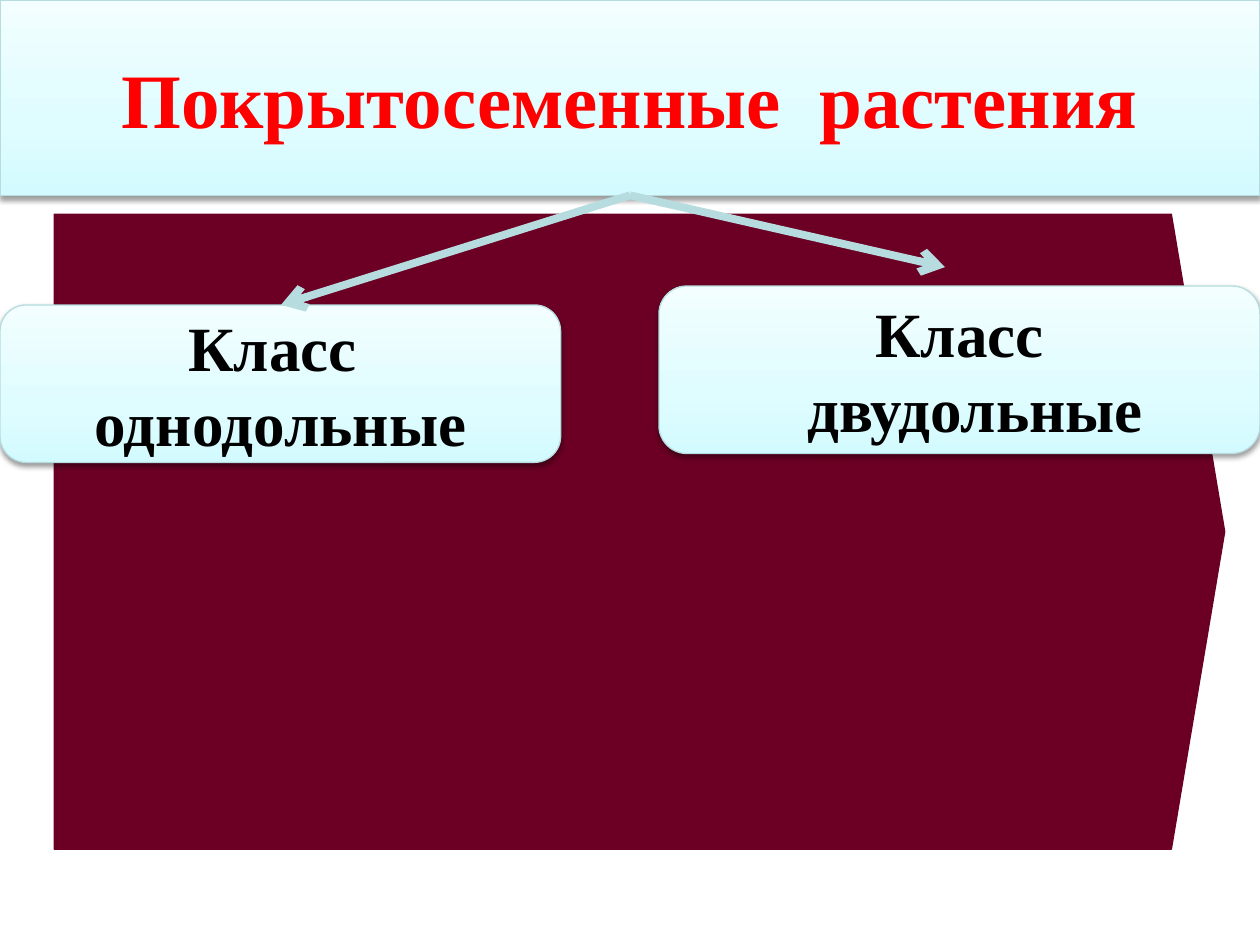
import dataclasses
import typing

import pptx
import pptx.dml.color
import pptx.enum.shapes
import pptx.enum.text
import pptx.oxml
import pptx.oxml.ns
import pptx.util
import lxml.etree

Inches = pptx.util.Inches
ShapeType = pptx.enum.shapes.MSO_SHAPE


@dataclasses.dataclass(frozen=True)
class Theme:
    font: str = "Times New Roman"
    title_size: int = 44
    class_size: int = 36
    title_color: str = "FF0000"
    class_color: str = "000000"
    backdrop: str = "6C0024"
    border: str = "B6DCDF"
    border_width: float = 0.75
    arrow_width: float = 4.5
    gradient: tuple = ((0, "D3FBFF"), (35, "DFFCFF"), (100, "F2FEFF"))


@dataclasses.dataclass(frozen=True)
class Panel:
    shape_type: typing.Any
    left: float
    top: float
    width: float
    height: float
    lines: tuple
    size: int
    color: str


@dataclasses.dataclass(frozen=True)
class Arrow:
    end_x: float
    end_y: float


THEME = Theme()
ARROW_START = (5, 1.55)
PANELS = (
    Panel(ShapeType.RECTANGLE, 0, 0, 10, 1.55,
          ("Покрытосеменные  растения",), THEME.title_size, THEME.title_color),
    Panel(ShapeType.ROUNDED_RECTANGLE, 0, 2.42, 4.45, 1.25,
          ("Класс  однодольные",), THEME.class_size, THEME.class_color),
    Panel(ShapeType.ROUNDED_RECTANGLE, 5.23, 2.27, 4.77, 1.33,
          ("Класс", "  двудольные"), THEME.class_size, THEME.class_color),
)
ARROWS = (Arrow(2.23, 2.42), Arrow(7.5, 2.12))


def rgb(value: str) -> pptx.dml.color.RGBColor:
    return pptx.dml.color.RGBColor.from_string(value)


def add_element(parent: typing.Any, tag: str, **attributes: str) -> typing.Any:
    return lxml.etree.SubElement(parent, pptx.oxml.ns.qn(tag), attributes)


def set_line(line: typing.Any, color: str, width: float) -> None:
    line.color.rgb = rgb(color)
    line.width = pptx.util.Pt(width)


def fill_gradient(shape: typing.Any) -> None:
    shape.fill.gradient()
    shape.fill.gradient_angle = 90
    stops = shape.element.spPr.find(".//" + pptx.oxml.ns.qn("a:gsLst"))
    for stop in list(stops):
        stops.remove(stop)
    for position, color in THEME.gradient:
        stop = add_element(stops, "a:gs", pos=str(position * 1000))
        add_element(stop, "a:srgbClr", val=color)


def add_shadow(shape: typing.Any) -> None:
    shape.shadow.inherit = False
    effects = shape.element.spPr.find(pptx.oxml.ns.qn("a:effectLst"))
    shadow = add_element(
        effects, "a:outerShdw", blurRad=str(pptx.util.Pt(3.1)),
        dist=str(pptx.util.Pt(1.6)), dir="5400000", rotWithShape="0")
    color = add_element(shadow, "a:srgbClr", val="000000")
    add_element(color, "a:alpha", val="38000")


def add_backdrop(slide: typing.Any) -> None:
    shape = slide.shapes.add_shape(
        ShapeType.PENTAGON, Inches(0.43), Inches(1.7), Inches(9.29), Inches(5.04))
    shape.adjustments[0] = 0.084
    shape.shadow.inherit = False
    shape.fill.solid()
    shape.fill.fore_color.rgb = rgb(THEME.backdrop)
    set_line(shape.line, THEME.backdrop, THEME.border_width)


def add_panel(slide: typing.Any, panel: Panel) -> None:
    shape = slide.shapes.add_shape(
        panel.shape_type, Inches(panel.left), Inches(panel.top),
        Inches(panel.width), Inches(panel.height))
    fill_gradient(shape)
    set_line(shape.line, THEME.border, THEME.border_width)
    add_shadow(shape)
    frame = shape.text_frame
    frame.word_wrap = True
    frame.vertical_anchor = pptx.enum.text.MSO_ANCHOR.MIDDLE
    frame.text = "\n".join(panel.lines)
    font_format = {
        "name": THEME.font, "size": pptx.util.Pt(panel.size), "bold": True}
    for paragraph in frame.paragraphs:
        paragraph.alignment = pptx.enum.text.PP_ALIGN.CENTER
        for run in paragraph.runs:
            for name, value in font_format.items():
                setattr(run.font, name, value)
            run.font.color.rgb = rgb(panel.color)


def add_arrow(slide: typing.Any, arrow: Arrow) -> None:
    connector = slide.shapes.add_connector(
        pptx.enum.shapes.MSO_CONNECTOR.STRAIGHT,
        *map(Inches, ARROW_START), Inches(arrow.end_x), Inches(arrow.end_y))
    set_line(connector.line, THEME.border, THEME.arrow_width)
    properties = connector.element.spPr
    add_element(properties.find(pptx.oxml.ns.qn("a:ln")), "a:tailEnd", type="arrow")
    add_element(properties, "a:effectLst")


def main() -> None:
    presentation = pptx.Presentation()
    presentation.slide_width = Inches(10)
    presentation.slide_height = Inches(7.5)
    slide = presentation.slides.add_slide(presentation.slide_layouts[6])
    add_backdrop(slide)
    for panel in PANELS:
        add_panel(slide, panel)
    for arrow in ARROWS:
        add_arrow(slide, arrow)
    presentation.save("out.pptx")


if __name__ == "__main__":
    main()
